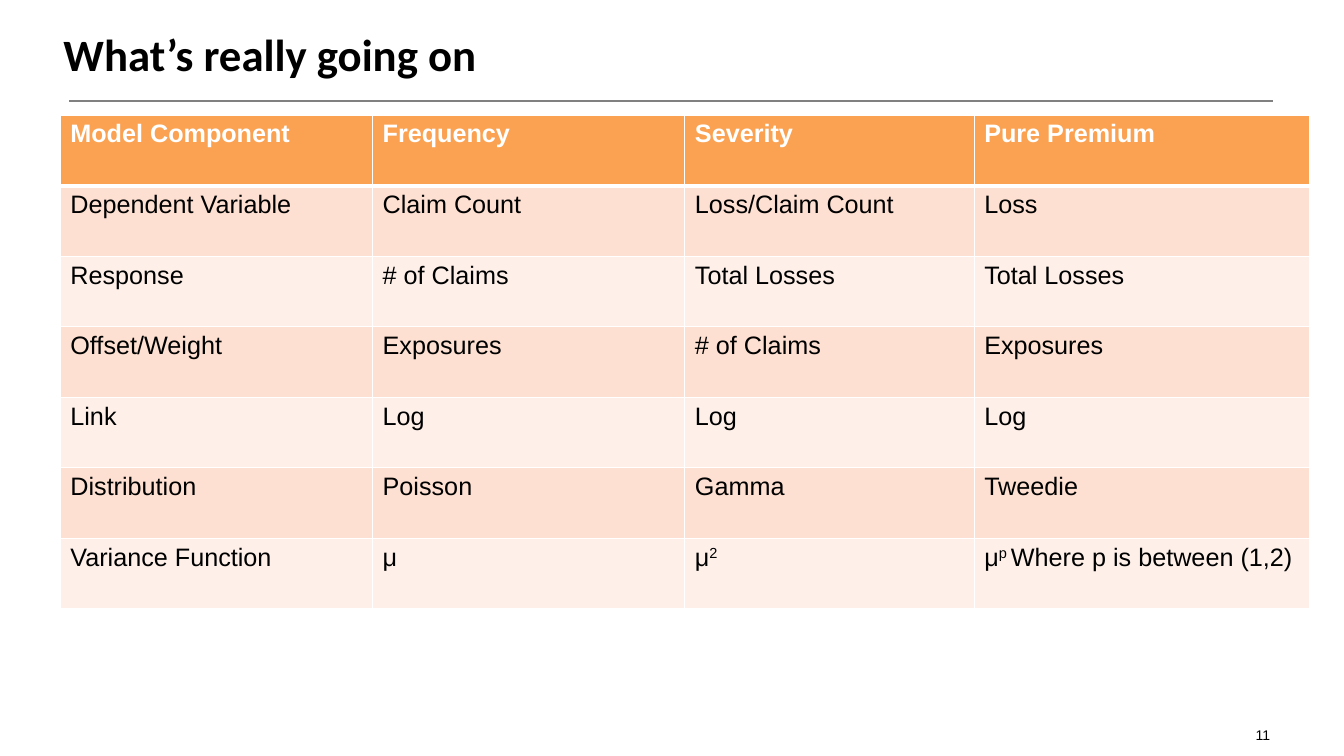
import pptx
import pptx.dml.color
import pptx.enum.shapes
import pptx.enum.text
import pptx.oxml
import pptx.oxml.ns
import pptx.util

Cm = pptx.util.Cm
Pt = pptx.util.Pt

HEADER, BAND_DARK, BAND_LIGHT = "FBA252", "FDE0D1", "FEF0E9"
WHITE, BLACK, GREY = "FFFFFF", "000000", "808080"
COLUMN_WIDTHS = [7.87, 7.87, 7.29, 8.46]

# A cell is plain text, or a list of (text, raised) pieces
ROWS = [
    ["Model Component", "Frequency", "Severity", "Pure Premium"],
    ["Dependent Variable", "Claim Count", "Loss/Claim Count", "Loss"],
    ["Response", "# of Claims", "Total Losses", "Total Losses"],
    ["Offset/Weight", "Exposures", "# of Claims", "Exposures"],
    ["Link", "Log", "Log", "Log"],
    ["Distribution", "Poisson", "Gamma", "Tweedie"],
    ["Variance Function", "μ", [("μ", False), ("2", True)],
     [("μ", False), ("p ", True), ("Where p is between (1,2)", False)]],
]


def colour(value):
    return pptx.dml.color.RGBColor.from_string(value)


def add_span(para, text, font, size, value, bold=False, raised=False):
    span = para.add_run()
    span.text = text
    span.font.name = font
    span.font.size = Pt(size)
    span.font.bold = bold
    span.font.color.rgb = colour(value)
    if raised:
        span._r.get_or_add_rPr().set("baseline", "30000")


def add_borders(cell, bottom_width):
    properties = cell._tc.get_or_add_tcPr()
    for side, width in (("L", 1), ("R", 1), ("T", 1), ("B", bottom_width)):
        properties.append(pptx.oxml.parse_xml(
            f'<a:ln{side} {pptx.oxml.ns.nsdecls("a")} w="{Pt(width)}">'
            f'<a:solidFill><a:srgbClr val="{WHITE}"/></a:solidFill></a:ln{side}>'))


def add_title(page, left, top, width, height):
    box = page.shapes.add_textbox(Cm(left), Cm(top), Cm(width), Cm(height))
    box.text_frame.word_wrap = True
    add_span(box.text_frame.paragraphs[0], "What’s really going on",
             "Calibri", 32, BLACK, bold=True)


def add_rule(page, left, top, width):
    rule = page.shapes.add_connector(
        pptx.enum.shapes.MSO_CONNECTOR.STRAIGHT,
        Cm(left), Cm(top), Cm(left + width), Cm(top))
    rule.line.color.rgb = colour(GREY)
    rule.line.width = Pt(1.5)
    rule._element.spPr.append(pptx.oxml.parse_xml(
        f'<a:effectLst {pptx.oxml.ns.nsdecls("a")}/>'))


def add_model_table(page, left, top, width, height):
    frame = page.shapes.add_table(len(ROWS), len(COLUMN_WIDTHS),
                                  Cm(left), Cm(top), Cm(width), Cm(height))
    table = frame.table
    for column, column_width in zip(table.columns, COLUMN_WIDTHS):
        column.width = Cm(column_width)
    for row_number, texts in enumerate(ROWS):
        table.rows[row_number].height = Cm(height / len(ROWS))
        is_header = row_number == 0
        band = BAND_DARK if row_number % 2 else BAND_LIGHT
        for column_number, content in enumerate(texts):
            cell = table.cell(row_number, column_number)
            # Borders come before the fill in the cell properties
            add_borders(cell, 3 if is_header else 1)
            cell.fill.solid()
            cell.fill.fore_color.rgb = colour(HEADER if is_header else band)
            pieces = [(content, False)] if isinstance(content, str) else content
            for text, raised in pieces:
                add_span(cell.text_frame.paragraphs[0], text, "Arial", 18,
                         WHITE if is_header else BLACK, is_header, raised)


def add_page_number(page, left, top, width, height):
    box = page.shapes.add_textbox(Cm(left), Cm(top), Cm(width), Cm(height))
    box.text_frame.word_wrap = False
    para = box.text_frame.paragraphs[0]
    para.alignment = pptx.enum.text.PP_ALIGN.RIGHT
    para.line_spacing = 1.5
    add_span(para, "11", "Arial", 10, BLACK)


def main():
    deck = pptx.Presentation()
    deck.slide_width, deck.slide_height = Cm(33.87), Cm(19.05)
    page = deck.slides.add_slide(deck.slide_layouts[6])
    add_page_number(page, 31.32, 17.98, 0.94, 0.89)
    add_rule(page, 1.75, 2.54, 30.33)
    add_title(page, 1.35, 0.56, 31, 1.63)
    add_model_table(page, 1.52, 2.9, sum(COLUMN_WIDTHS), 12.45)
    deck.save("out.pptx")


if __name__ == "__main__":
    main()
